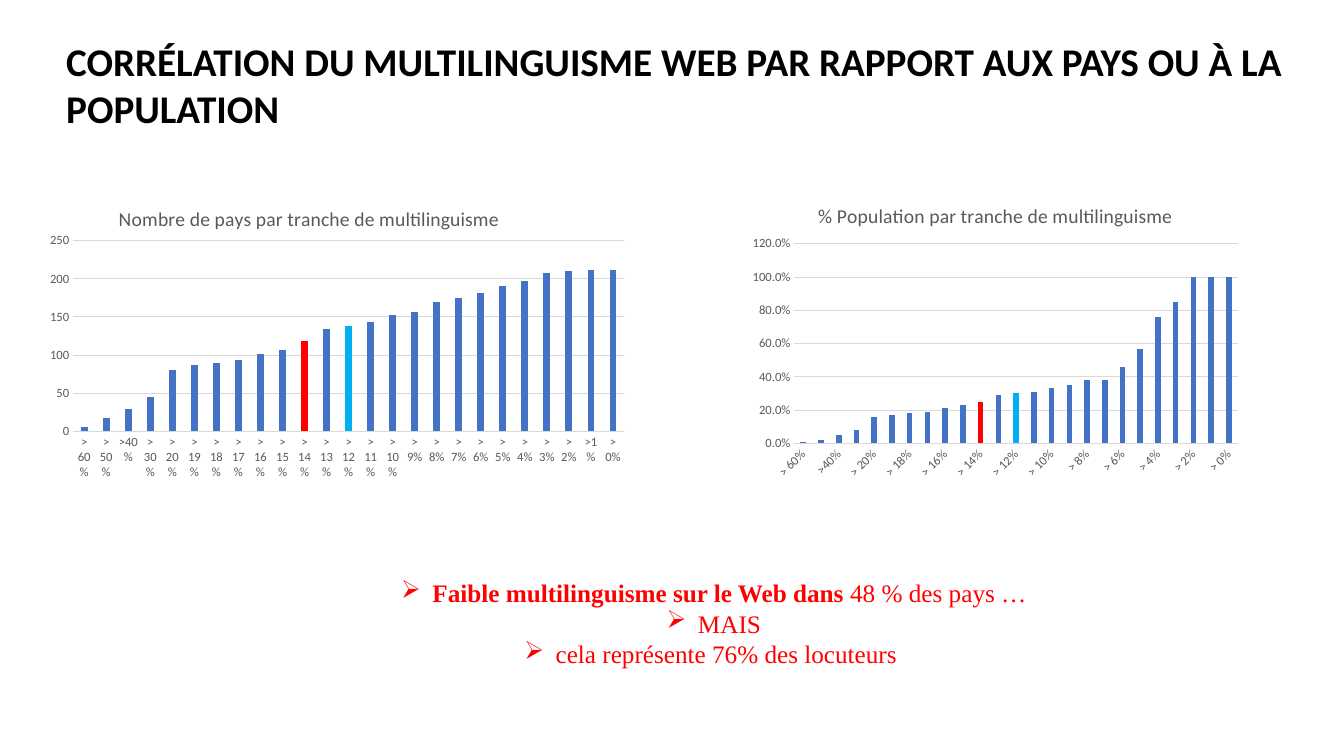
from lxml import etree
from pptx import Presentation
from pptx.chart.data import CategoryChartData
from pptx.dml.color import RGBColor
from pptx.enum.chart import XL_CHART_TYPE, XL_TICK_MARK
from pptx.enum.text import MSO_AUTO_SIZE, PP_ALIGN
from pptx.oxml.ns import qn
from pptx.util import Cm, Pt

COLUMNS = XL_CHART_TYPE.COLUMN_CLUSTERED
NO_TICK = XL_TICK_MARK.NONE
GROW = MSO_AUTO_SIZE.SHAPE_TO_FIT_TEXT
CENTER = PP_ALIGN.CENTER

COLORS = {name: RGBColor.from_string(value) for name, value in {
    "black": "000000", "red": "FF0000", "blue": "4472C4",
    "cyan": "00B0F0", "label": "595959", "grid": "D9D9D9"}.items()}


def write(paragraph, text, size=18, font="Calibri", color="black", bold=False):
    run = paragraph.add_run()
    run.text = text
    run.font.size = Pt(size)
    run.font.name = font
    run.font.bold = bold
    run.font.color.rgb = COLORS[color]


def place(chart_part, index, **fractions):
    """Set a manual layout, in fractions of the chart's size."""
    for automatic in chart_part.findall(qn("c:layout")):
        chart_part.remove(automatic)
    layout = etree.Element(qn("c:layout"))
    manual = etree.SubElement(layout, qn("c:manualLayout"))
    if "w" in fractions:
        etree.SubElement(manual, qn("c:layoutTarget")).set("val", "inner")
    for mode in ("xMode", "yMode"):
        etree.SubElement(manual, qn("c:" + mode)).set("val", "edge")
    for key, value in fractions.items():
        etree.SubElement(manual, qn("c:" + key)).set("val", str(value))
    chart_part.insert(index, layout)


presentation = Presentation()
presentation.slide_width, presentation.slide_height = Cm(33.87), Cm(19.05)
slide = presentation.slides.add_slide(presentation.slide_layouts[6])

# Heading
heading = slide.shapes.add_textbox(Cm(1.42), Cm(0.81), Cm(31.67), Cm(1.45)).text_frame
heading.word_wrap = True
heading.auto_size = GROW
write(heading.paragraphs[0],
      "CORRÉLATION DU MULTILINGUISME WEB PAR RAPPORT AUX PAYS OU À LA POPULATION",
      size=28, bold=True)

# Multilingualism bands shared by both charts
bands = [f">{'' if limit in (40, 1) else ' '}{limit}%"
         for limit in (60, 50, 40, 30, *range(20, -1, -1))]
highlights = {"> 14%": "red", "> 12%": "cyan"}

countries = [5, 17, 29, 45, 80, 87, 90, 94, 101, 106, 119, 134, 138, 143, 153,
             157, 169, 175, 182, 190, 197, 208, 210, 211, 212]
population = [0.01, 0.02, 0.05, 0.08, 0.16, 0.17, 0.18, 0.19, 0.21, 0.23, 0.25, 0.29,
              0.3, 0.31, 0.33, 0.35, 0.38, 0.38, 0.46, 0.57, 0.76, 0.85, 1, 1, 1]

# Title, values, number format, left, width, axis top, axis step, title and plot places
charts = [
    ("Nombre de pays par tranche de multilinguisme", countries, "General",
     0.94, 15.09, 250, 50,
     dict(x=0.13, y=0.06), dict(x=0.06, y=0.19, w=0.92, h=0.63)),
    ("% Population par tranche de multilinguisme", population, "0.0%",
     18.75, 12.7, 1.2, 0.2,
     dict(x=0.14, y=0.05), dict(x=0.1, y=0.2, w=0.88, h=0.66)),
]

for title, values, number_format, left, width, top, step, title_place, plot_place in charts:
    data = CategoryChartData(number_format=number_format)
    data.categories = bands
    data.add_series("Series 1", values)
    chart = slide.shapes.add_chart(
        COLUMNS, Cm(left), Cm(4.62), Cm(width), Cm(7.62), data).chart
    chart.has_legend = False
    chart.font.size = Pt(10)
    chart.font.name = "Calibri"
    chart.font.color.rgb = COLORS["black"]

    write(chart.chart_title.text_frame.paragraphs[0], title, size=14, color="label")
    place(chart.chart_title._element, 1, **title_place)
    place(chart._chartSpace.chart.plotArea, 0, **plot_place)

    # Columns
    plot = chart.plots[0]
    plot.gap_width = 219
    plot.overlap = -27
    plot.vary_by_categories = False
    columns = plot.series[0]
    columns.format.fill.solid()
    columns.format.fill.fore_color.rgb = COLORS["blue"]
    for band, color in highlights.items():
        fill = columns.points[bands.index(band)].format.fill
        fill.solid()
        fill.fore_color.rgb = COLORS[color]

    # Axes
    for axis in (chart.category_axis, chart.value_axis):
        axis.major_tick_mark = axis.minor_tick_mark = NO_TICK
        labels = axis.tick_labels
        labels.font.size = Pt(9)
        labels.font.name = "Calibri"
        labels.font.color.rgb = COLORS["label"]
        # This angle lets the labels wrap or turn as space allows
        axis._element.find(qn("c:txPr")).find(qn("a:bodyPr")).set("rot", "-60000000")
    scale = chart.value_axis
    scale.minimum_scale, scale.maximum_scale, scale.major_unit = 0, top, step
    scale.tick_labels.number_format = number_format
    scale.tick_labels.number_format_is_linked = False
    scale.format.line.fill.background()
    for line in (scale.major_gridlines.format.line, chart.category_axis.format.line):
        line.width = Pt(0.75)
        line.color.rgb = COLORS["grid"]

# Conclusions
conclusions = slide.shapes.add_textbox(Cm(5.72), Cm(14.43), Cm(24.54), Cm(2.57)).text_frame
conclusions.word_wrap = True
conclusions.auto_size = GROW
findings = [
    [("Faible multilinguisme sur le Web dans ", True), ("48 % des pays …", False)],
    [("MAIS", False)],
    [("cela représente 76% des locuteurs ", False)],
]
for number, finding in enumerate(findings):
    paragraph = conclusions.add_paragraph() if number else conclusions.paragraphs[0]
    paragraph.alignment = CENTER
    properties = paragraph._p.get_or_add_pPr()
    properties.set("marL", str(Cm(0.79)))
    properties.set("indent", str(-Cm(0.79)))
    etree.SubElement(properties, qn("a:buChar")).set("char", "➢")
    for text, bold in finding:
        write(paragraph, text, font="Times New Roman", color="red", bold=bold)

presentation.save("out.pptx")
